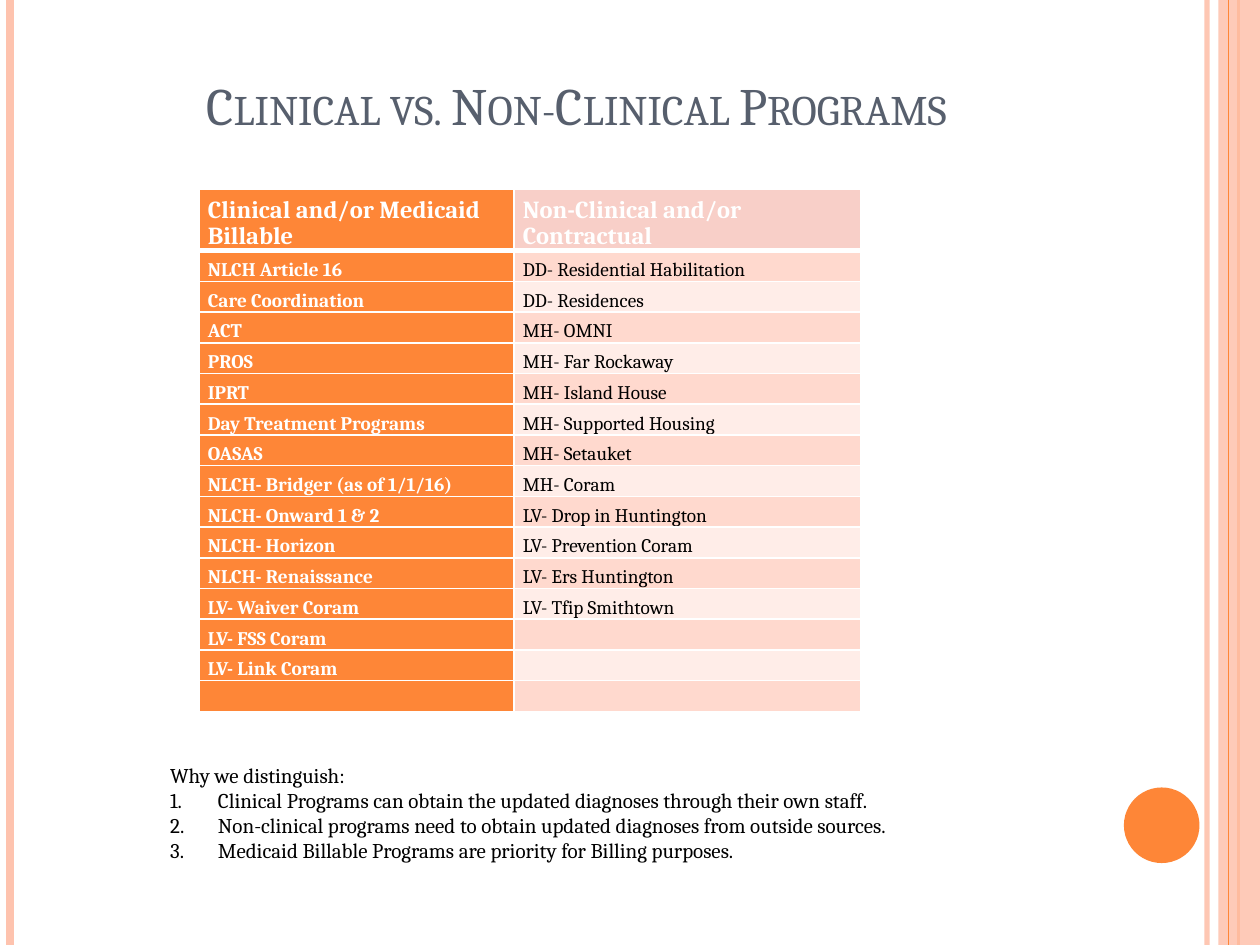
"""Builds the slide that sets clinical programs beside non-clinical ones."""
from itertools import zip_longest

from lxml import etree
from pptx import Presentation
from pptx import util as u
from pptx.dml.color import RGBColor
from pptx.enum import shapes, text
from pptx.oxml.ns import qn

COLORS = {
    "orange": "FE8637", "peach": "FEC3AE", "title": "575F6D",
    "white": "FFFFFF", "black": "000000", "header": "F8CFC8",
    "band_dark": "FFD9CE", "band_light": "FFEDE8",
}
HEADERS = ("Clinical and/or Medicaid Billable", "Non-Clinical and/or Contractual")
CLINICAL = [
    "NLCH Article 16", "Care Coordination", "ACT", "PROS", "IPRT",
    "Day Treatment Programs", "OASAS", "NLCH- Bridger (as of 1/1/16)",
    "NLCH- Onward 1 & 2", "NLCH- Horizon", "NLCH- Renaissance",
    "LV- Waiver Coram", "LV- FSS Coram", "LV- Link Coram", "",
]
NON_CLINICAL = [
    "DD- Residential Habilitation", "DD- Residences", "MH- OMNI",
    "MH- Far Rockaway", "MH- Island House", "MH- Supported Housing",
    "MH- Setauket", "MH- Coram", "LV- Drop in Huntington",
    "LV- Prevention Coram", "LV- Ers Huntington", "LV- Tfip Smithtown",
]
REASONS = [
    "Clinical Programs can obtain the updated diagnoses through their own staff.",
    "Non-clinical programs need to obtain updated diagnoses from outside sources.",
    "Medicaid Billable Programs are priority for Billing purposes.",
]


class SlideBuilder:
    """Holds the style and the current slide."""

    font = "Cambria"

    def __init__(self, slide):
        self.slide = slide

    def color(self, name):
        return RGBColor.from_string(COLORS[name])

    def set_alpha(self, element, percent):
        color = element.find(".//" + qn("a:srgbClr"))
        etree.SubElement(color, qn("a:alpha")).set("val", str(percent * 1000))

    def format_runs(self, paragraph, size, color, bold=False):
        for run in paragraph.runs:
            run.font.name = self.font
            run.font.size = u.Pt(size)
            run.font.bold = bold
            run.font.color.rgb = self.color(color)

    def place(self, shape, left, top, width, height):
        shape.left, shape.top = u.Inches(left), u.Inches(top)
        shape.width, shape.height = u.Inches(width), u.Inches(height)

    def stripe(self, x, width, color, alpha=None):
        line = self.slide.shapes.add_connector(
            shapes.MSO_CONNECTOR.STRAIGHT,
            u.Inches(x), u.Inches(0), u.Inches(x), u.Inches(7.5))
        line.line.width = u.Pt(width)
        line.line.color.rgb = self.color(color)
        properties = line._element.spPr
        if alpha:
            self.set_alpha(properties, alpha)
        etree.SubElement(properties, qn("a:effectLst"))

    def filled_shape(self, kind, left, top, width, height, color, alpha=None):
        shape = self.slide.shapes.add_shape(
            kind, u.Inches(left), u.Inches(top), u.Inches(width), u.Inches(height))
        shape.shadow.inherit = False
        shape.fill.solid()
        shape.fill.fore_color.rgb = self.color(color)
        shape.line.fill.background()
        if alpha:
            self.set_alpha(shape._element.spPr, alpha)

    def title(self, wording):
        shape = self.slide.shapes.title
        self.place(shape, 0.49, 0.33, 8.17, 0.8)
        frame = shape.text_frame
        frame.text = wording
        frame.auto_size = text.MSO_AUTO_SIZE.NONE
        frame.vertical_anchor = text.MSO_ANCHOR.BOTTOM
        paragraph = frame.paragraphs[0]
        paragraph.alignment = text.PP_ALIGN.CENTER
        self.format_runs(paragraph, 30, "title")
        paragraph.runs[0].font._element.set("cap", "small")

    def numbered_list(self, heading, items):
        shape = self.slide.placeholders[1]
        self.place(shape, 1.25, 6, 6.64, 0.91)
        frame = shape.text_frame
        frame.text = "\n".join([heading, *items])
        frame.auto_size = text.MSO_AUTO_SIZE.NONE
        for index, paragraph in enumerate(frame.paragraphs):
            paragraph.space_before = u.Pt(0)
            self.format_runs(paragraph, 12, "black")
            properties = paragraph._element.get_or_add_pPr()
            indent = u.Inches(0.38) if index else 0
            properties.set("marL", str(indent))
            properties.set("indent", str(-indent))
            if index:
                bullet = etree.SubElement(properties, qn("a:buAutoNum"))
                bullet.set("type", "arabicPeriod")
            else:
                etree.SubElement(properties, qn("a:buNone"))

    def borders(self, cell, top, bottom):
        properties = cell._tc.get_or_add_tcPr()
        for side, width in (("L", 1), ("R", 1), ("T", top), ("B", bottom)):
            line = etree.SubElement(properties, qn("a:ln" + side))
            line.set("w", str(u.Pt(width)))
            fill = etree.SubElement(line, qn("a:solidFill"))
            etree.SubElement(fill, qn("a:srgbClr")).set("val", COLORS["white"])

    def cell(self, cell, wording, fill, size, color, bold):
        cell.fill.solid()
        cell.fill.fore_color.rgb = self.color(fill)
        cell.vertical_anchor = text.MSO_ANCHOR.BOTTOM
        cell.margin_left = cell.margin_right = u.Inches(0.07)
        cell.margin_top = cell.margin_bottom = 0
        cell.text = wording
        paragraph = cell.text_frame.paragraphs[0]
        paragraph.line_spacing = u.Pt(15)
        self.format_runs(paragraph, size, color, bold)
        if not wording:
            ending = etree.SubElement(paragraph._element, qn("a:endParaRPr"))
            ending.set("sz", str(size * 100))

    def table(self, rows, left, top, widths, height, header_height):
        table = self.slide.shapes.add_table(
            len(rows), len(widths), u.Inches(left), u.Inches(top),
            u.Inches(sum(widths)), u.Inches(height)).table
        table.horz_banding = False
        for column, width in zip(table.columns, widths):
            column.width = u.Inches(width)
        row_height = (height - header_height) / (len(rows) - 1)
        for r, wordings in enumerate(rows):
            table.rows[r].height = u.Inches(row_height if r else header_height)
            band = "band_dark" if r % 2 else "band_light"
            for c, wording in enumerate(wordings):
                cell = table.cell(r, c)
                self.borders(cell, 3 if r == 1 else 1, 1 if r else 3)
                strong = r == 0 or c == 0
                fill = "orange" if c == 0 else band if r else "header"
                self.cell(cell, wording, fill, 11 if r else 14,
                          "white" if strong else "black", strong)


def main():
    presentation = Presentation()
    presentation.slide_width, presentation.slide_height = u.Inches(10), u.Inches(7.5)
    slide = presentation.slides.add_slide(presentation.slide_layouts[1])
    builder = SlideBuilder(slide)
    builder.stripe(9.58, 3, "peach", 93)
    builder.stripe(0.08, 4.5, "peach")
    builder.stripe(9.83, 1.5, "orange")
    builder.filled_shape(shapes.MSO_SHAPE.RECTANGLE, 9.67, 0, 0.33, 7.5, "peach", 87)
    builder.stripe(9.75, 0.75, "orange")
    builder.filled_shape(shapes.MSO_SHAPE.OVAL, 8.92, 6.25, 0.6, 0.6, "orange")
    builder.title("Clinical vs. Non-Clinical Programs")
    programs = zip_longest(CLINICAL, NON_CLINICAL, fillvalue="")
    builder.table([HEADERS, *programs], 1.58, 1.5, (2.5, 2.75), 4.15, 0.49)
    builder.numbered_list("Why we distinguish:", REASONS)
    presentation.save("out.pptx")


if __name__ == "__main__":
    main()
